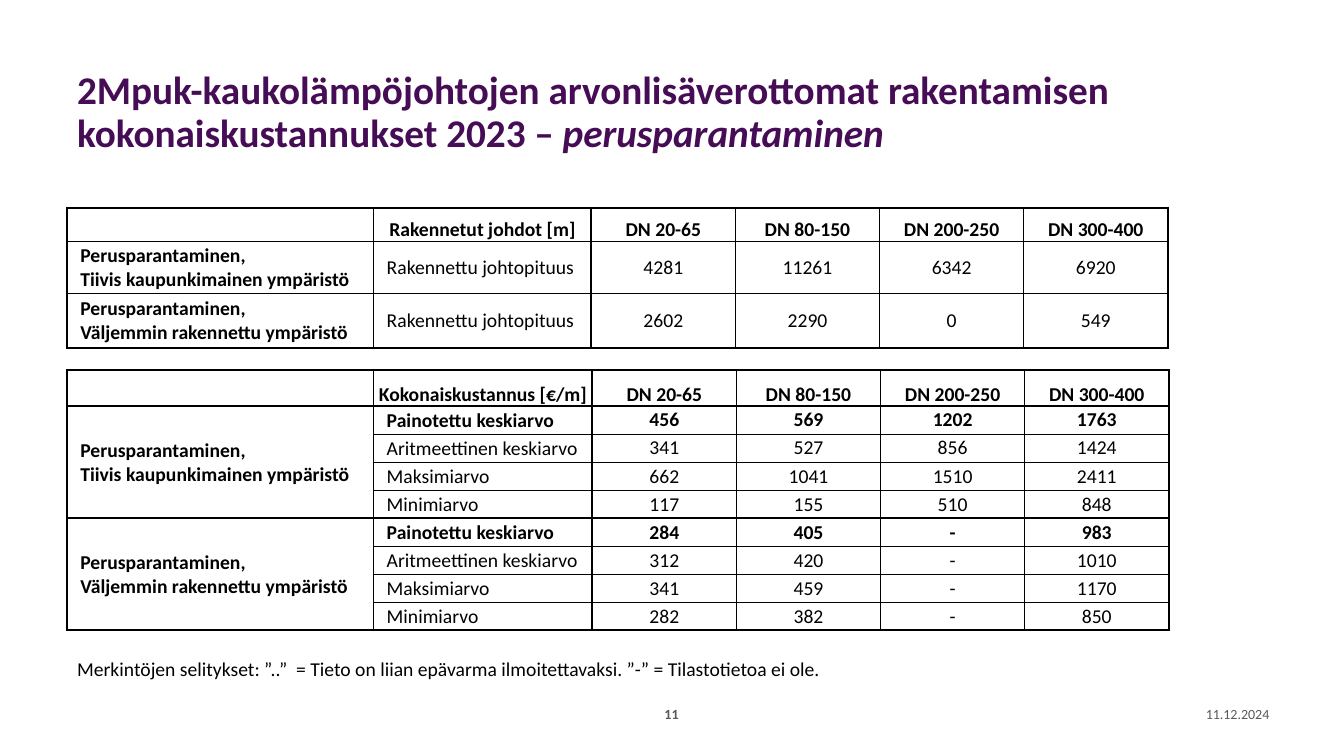
from lxml.etree import SubElement
from pptx import Presentation
from pptx.dml.color import RGBColor
from pptx.enum.text import MSO_ANCHOR as Anchor, PP_ALIGN as Align
from pptx.oxml import parse_xml
from pptx.oxml.ns import nsdecls, qn
from pptx.util import Inches, Pt

GRID_COLUMNS, GRID_ROWS = 160, 90
SLIDE_WIDTH, SLIDE_HEIGHT = Inches(13.33), Inches(7.5)
FONT = "Calibri"
COLORS = {"title": "460D56", "text": "000000", "footer": "595959",
          "cell": "FFFFFF", "border": "000000"}
LEFT, CONTENT_WIDTH = 8, 130.9
LABEL_WIDTH, DIAMETER_WIDTH = 36.48, 17.16
LABEL_INDENT = 1.44
THIN, THICK = 1, 1.5
THICK_COLUMN_EDGES = {0, 2, 6}

DIAMETERS = ["DN 20-65", "DN 80-150", "DN 200-250", "DN 300-400"]
DENSE = "Perusparantaminen,\nTiivis kaupunkimainen ympäristö"
SPARSE = "Perusparantaminen,\nVäljemmin rakennettu ympäristö"
WEIGHTED = "Painotettu keskiarvo"
MEASURES = [WEIGHTED, "Aritmeettinen keskiarvo", "Maksimiarvo", "Minimiarvo"]

LENGTHS = [
    (DENSE, ["Rakennettu johtopituus"], ["4281 11261 6342 6920"]),
    (SPARSE, ["Rakennettu johtopituus"], ["2602 2290 0 549"]),
]
COSTS = [
    (DENSE, MEASURES, ["456 569 1202 1763", "341 527 856 1424",
                       "662 1041 1510 2411", "117 155 510 848"]),
    (SPARSE, MEASURES, ["284 405 - 983", "312 420 - 1010",
                        "341 459 - 1170", "282 382 - 850"]),
]


def across(columns):
    return round(SLIDE_WIDTH * columns / GRID_COLUMNS)


def down(rows):
    return round(SLIDE_HEIGHT * rows / GRID_ROWS)


def write_text(frame, text, italic_end="", size=14, color="text", bold=False,
               align=Align.LEFT, indent=0, line_spacing=None):
    for index, line in enumerate(text.split("\n")):
        paragraph = frame.add_paragraph() if index else frame.paragraphs[0]
        paragraph.alignment = align
        if line_spacing:
            paragraph.line_spacing = line_spacing
        if indent:
            paragraph._p.get_or_add_pPr().set("marL", str(across(indent)))
        for part, italic in ((line, False), (italic_end, True)):
            if part:
                run = paragraph.add_run()
                run.text = part
                run.font.name = FONT
                run.font.size = Pt(size)
                run.font.bold = bold
                run.font.italic = italic
                run.font.color.rgb = RGBColor.from_string(COLORS[color])
        if not line:
            SubElement(paragraph._p, qn("a:endParaRPr"), sz=str(size * 100))


def add_text_box(slide, left, top, width, height, text, anchor=Anchor.MIDDLE,
                 **text_format):
    shape = slide.shapes.add_textbox(across(left), down(top),
                                     across(width), down(height))
    shape.text_frame.word_wrap = True
    shape.text_frame.vertical_anchor = anchor
    write_text(shape.text_frame, text, **text_format)


def set_borders(cell, weights):
    properties = cell._tc.get_or_add_tcPr()
    for index, (side, weight) in enumerate(zip("LRTB", weights)):
        properties.insert(index, parse_xml(
            f'<a:ln{side} {nsdecls("a")} w="{Pt(weight)}"><a:solidFill>'
            f'<a:srgbClr val="{COLORS["border"]}"/></a:solidFill></a:ln{side}>'))


def fill_cell(cell, text, anchor, inset, **text_format):
    cell.vertical_anchor = anchor
    cell.margin_left = cell.margin_right = cell.margin_top = Inches(inset)
    cell.margin_bottom = 0
    cell.fill.solid()
    cell.fill.fore_color.rgb = RGBColor.from_string(COLORS["cell"])
    write_text(cell.text_frame, text, **text_format)


def table_rows(heading, groups):
    rows = [["", heading] + DIAMETERS]
    for environment, measures, values in groups:
        for index, (measure, numbers) in enumerate(zip(measures, values)):
            rows.append(["" if index else environment, measure] + numbers.split())
    return rows


def add_cost_table(slide, top, heading, groups, heading_width, heights):
    rows = table_rows(heading, groups)
    group_size = len(groups[0][1])
    widths = [LABEL_WIDTH, heading_width] + [DIAMETER_WIDTH] * len(DIAMETERS)
    table = slide.shapes.add_table(
        len(rows), len(widths), across(LEFT), down(top),
        across(sum(widths)), down(sum(heights))).table
    table.first_row = table.horz_banding = False
    for column, width in zip(table.columns, widths):
        column.width = across(width)
    for row, height in zip(table.rows, heights):
        row.height = down(height)

    thick_row_edges = {0, len(rows)}
    if group_size > 1:
        thick_row_edges.update(range(1, len(rows), group_size))
        for first in range(1, len(rows), group_size):
            table.cell(first, 0).merge(table.cell(first + group_size - 1, 0))

    for row_index, row in enumerate(rows):
        for column_index, text in enumerate(row):
            cell = table.cell(row_index, column_index)
            header = row_index == 0
            label = column_index < 2 and not header
            fill_cell(cell, text,
                      anchor=Anchor.BOTTOM if header else Anchor.MIDDLE,
                      inset=0.01 if header or label else 0,
                      bold=header or column_index == 0 or row[1] == WEIGHTED,
                      align=Align.LEFT if label else Align.CENTER,
                      indent=LABEL_INDENT if label else 0)
            if cell.is_spanned:
                continue
            span = cell.span_height if cell.is_merge_origin else 1
            edges = [(column_index, THICK_COLUMN_EDGES),
                     (column_index + 1, THICK_COLUMN_EDGES),
                     (row_index, thick_row_edges),
                     (row_index + span, thick_row_edges)]
            set_borders(cell, [THICK if edge in thick else THIN
                               for edge, thick in edges])


def main():
    presentation = Presentation()
    presentation.slide_width, presentation.slide_height = SLIDE_WIDTH, SLIDE_HEIGHT
    slide = presentation.slides.add_slide(presentation.slide_layouts[6])

    add_text_box(slide, LEFT, 4.8, CONTENT_WIDTH, 17.4,
                 "2Mpuk-kaukolämpöjohtojen arvonlisäverottomat rakentamisen "
                 "kokonaiskustannukset 2023 – ", italic_end="perusparantaminen",
                 size=28, color="title", bold=True, line_spacing=0.9)
    add_text_box(slide, 139, 83.4, 13.3, 3.24, "11.12.2024",
                 size=10, color="footer", align=Align.RIGHT)
    add_text_box(slide, 76.35, 83.4, 7.2, 3.24, "11",
                 size=10, color="footer", bold=True, align=Align.CENTER)
    add_cost_table(slide, 24.72, "Rakennetut johdot [m]", LENGTHS,
                   25.92, [4.08, 6.12, 6.48])
    add_cost_table(slide, 44.04, "Kokonaiskustannus [€/m]", COSTS,
                   26.04, [4.32] + [3.34] * 8)
    add_text_box(slide, LEFT, 77.64, CONTENT_WIDTH, 4.08,
                 "Merkintöjen selitykset: ”..”  = Tieto on liian epävarma "
                 "ilmoitettavaksi. ”-” = Tilastotietoa ei ole.",
                 anchor=Anchor.TOP)
    presentation.save("out.pptx")


if __name__ == "__main__":
    main()
